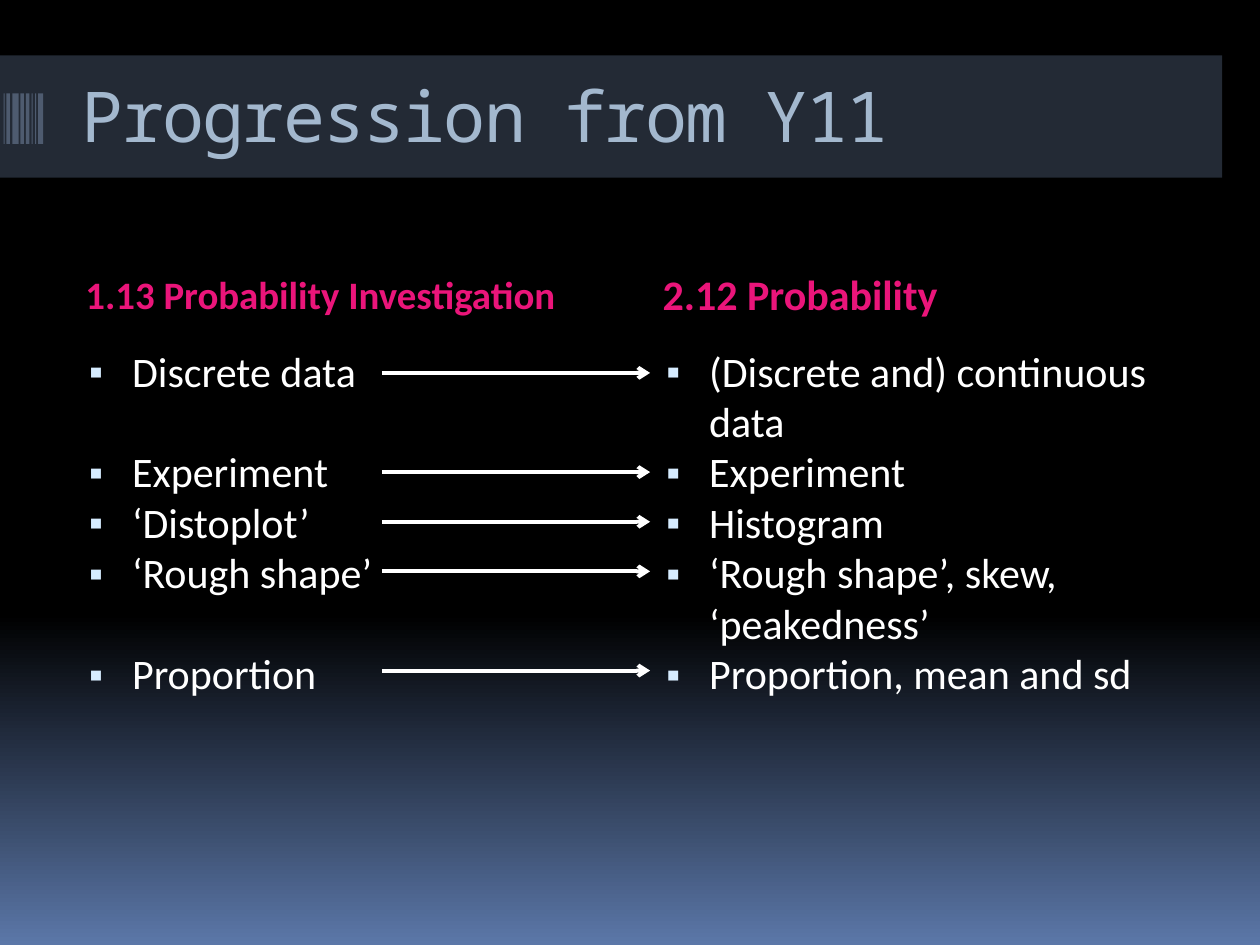
from copy import deepcopy

from pptx import Presentation
from pptx.dml.color import RGBColor
from pptx.enum.shapes import MSO_CONNECTOR, MSO_SHAPE
from pptx.enum.text import MSO_ANCHOR, PP_ALIGN
from pptx.oxml.ns import qn
from pptx.oxml.xmlchemy import OxmlElement
from pptx.util import Pt

ICE, PINK, WHITE, SLATE = "D6ECFF", "EA157A", "FFFFFF", "4E5B6F"
LEFT, RIGHT, WIDE = 36, 365.76, 318.24
LINE = 28.8  # pitch of the list lines


def color(code):
    return RGBColor.from_string(code)


def node(parent, tag, **attrs):
    item = OxmlElement(tag)
    for key, value in attrs.items():
        item.set(key, str(value))
    parent.append(item)
    return item


def backdrop(slide):
    fill = slide.background.fill
    fill.gradient()
    fill.gradient_angle = 270
    first = slide.element.find(".//" + qn("a:gs"))
    first.addnext(deepcopy(first))
    stops = zip(fill.gradient_stops, (0, 0.65, 1), ("000000", "000000", "5B77A8"))
    for stop, place, code in stops:
        stop.position = place
        stop.color.rgb = color(code)


def block(slide, x, y, w, h, code, alpha=None):
    box = slide.shapes.add_shape(MSO_SHAPE.RECTANGLE, Pt(x), Pt(y), Pt(w), Pt(h))
    box.shadow.inherit = False
    box.fill.solid()
    box.fill.fore_color.rgb = color(code)
    box.line.fill.background()
    if alpha:
        tint = box.element.spPr.find(".//" + qn("a:srgbClr"))
        node(tint, "a:alpha", val=alpha * 1000)


def place(box, x, y, w, h, anchor, top=3.6):
    box.left, box.top, box.width, box.height = Pt(x), Pt(y), Pt(w), Pt(h)
    frame = box.text_frame
    frame.word_wrap = True
    frame.vertical_anchor = anchor
    frame.margin_top = Pt(top)
    return frame


def write(para, text, size=24, font="Calibri", code=WHITE, bold=False,
          before=0, pitch=None, track=None):
    para.alignment = PP_ALIGN.LEFT
    para.space_before = Pt(before)
    if pitch:
        para.line_spacing = Pt(pitch)
    run = para.add_run()
    run.text = text
    run.font.size, run.font.name, run.font.bold = Pt(size), font, bold
    run.font.color.rgb = color(code)
    if track:
        run.font._element.set("spc", str(track * 100))


def indent(para, margin, hang=0):
    props = para._p.get_or_add_pPr()
    props.set("marL", str(Pt(margin)))
    props.set("indent", str(Pt(hang)))
    return props


def bullet(para):
    props = indent(para, 32.4, -27.36)
    node(node(props, "a:buClr"), "a:srgbClr", val=ICE)
    node(props, "a:buSzPct", val=95000)
    node(props, "a:buFont", typeface="Noto Sans Mono")
    node(props, "a:buChar", char="▪")


def column(slide, x, head, size, items):
    """Heading and bullets; each item is its text and the lines left free above."""
    box = slide.shapes.add_textbox(0, 0, 0, 0)
    para = place(box, x, 142.56, WIDE, 50.4, MSO_ANCHOR.MIDDLE).paragraphs[0]
    write(para, head, size=size, code=PINK, bold=True, before=7)
    indent(para, 5.76)

    box = slide.shapes.add_textbox(0, 0, 0, 0)
    frame = place(box, x, 193.68, WIDE, 311.76, MSO_ANCHOR.TOP)
    for i, (text, free) in enumerate(items):
        para = frame.add_paragraph() if i else frame.paragraphs[0]
        write(para, text, before=free * LINE, pitch=LINE)
        bullet(para)


def arrow(slide, x, y, end):
    line = slide.shapes.add_connector(
        MSO_CONNECTOR.STRAIGHT, Pt(x), Pt(y), Pt(end), Pt(y))
    line.line.color.rgb = color(WHITE)
    line.line.width = Pt(2.25)
    node(line.line._get_or_add_ln(), "a:tailEnd", type="arrow")
    node(line._element.spPr, "a:effectLst")


def main():
    deck = Presentation()
    deck.slide_width, deck.slide_height = Pt(720), Pt(540)
    slide = deck.slides.add_slide(deck.slide_layouts[5])
    backdrop(slide)

    # Title band with its stripes
    block(slide, 0, 31.68, 698.4, 69.84, "586A86", alpha=40)
    stripes = ((2, 0.7), (3.6, 2), (7, 3.6), (11.6, 2), (14.8, 2),
               (18, 0.7), (20, 0.7), (21.8, 2.9))
    for x, w in stripes:
        block(slide, x, 53.4, w, 28.8, SLATE)

    # Title
    frame = place(slide.shapes.title, 39.6, 40.32, 612, 72, MSO_ANCHOR.TOP, top=1)
    write(frame.paragraphs[0], "Progression from Y11", size=40,
          font="Noto Sans Mono", code=ICE, track=-1)

    # Two columns, matched row by row
    column(slide, LEFT, "1.13 Probability Investigation", 22.2, (
        ("Discrete data", 0), ("Experiment", 1), ("‘Distoplot’", 0),
        ("‘Rough shape’", 0), ("Proportion", 1)))
    column(slide, RIGHT, "2.12 Probability", 24, (
        ("(Discrete and) continuous data", 0), ("Experiment", 0),
        ("Histogram", 0), ("‘Rough shape’, skew, ‘peakedness’", 0),
        ("Proportion, mean and sd", 0)))

    # Arrows between the matching rows
    for row in (0, 2, 3, 4, 6):
        arrow(slide, 218.2, 213.1 + row * 28.35, 371.5)

    deck.save("out.pptx")


if __name__ == "__main__":
    main()
